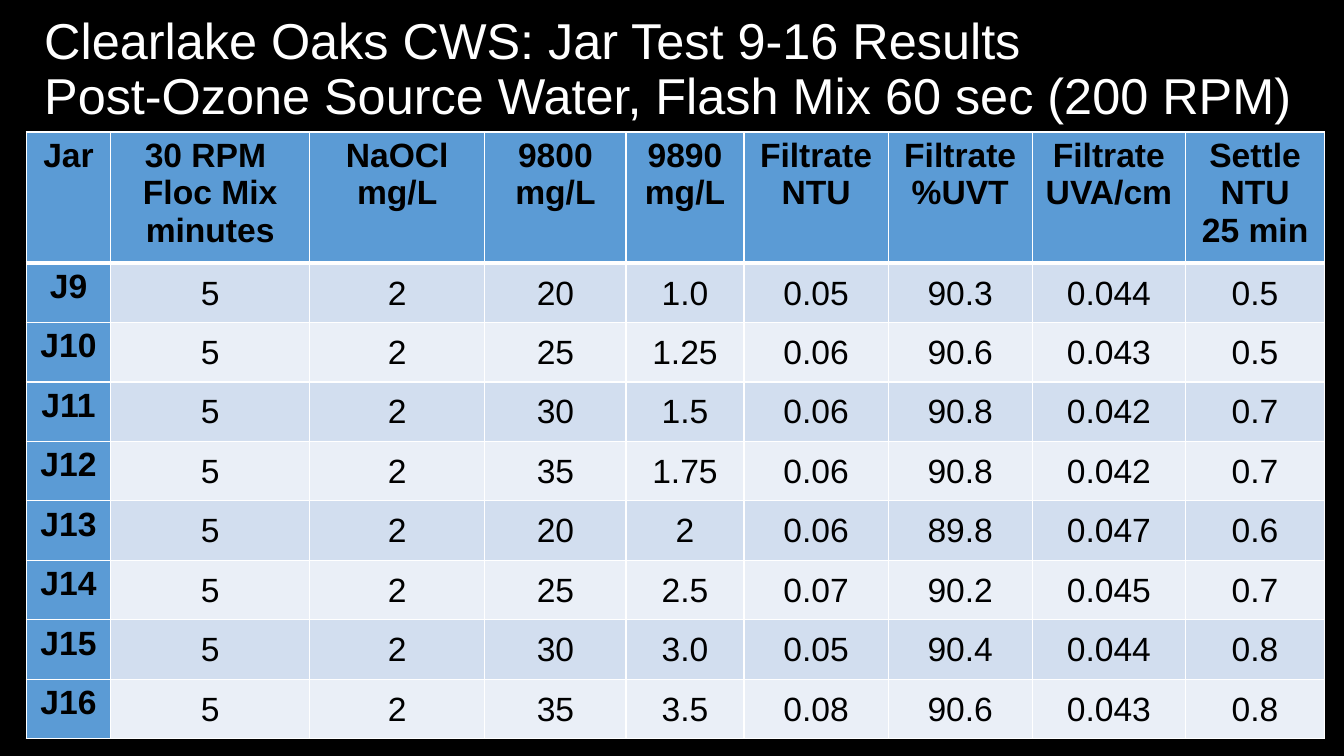
from pptx import Presentation
from pptx.dml.color import RGBColor
from pptx.enum.text import MSO_ANCHOR, PP_ALIGN
from pptx.oxml.ns import qn
from pptx.util import Inches, Pt
from lxml.etree import SubElement

FONT = "Arial"
BLACK, WHITE = "000000", "FFFFFF"
HEADER_BLUE, BAND_DARK, BAND_LIGHT = "5B9BD5", "D2DEEF", "EAEFF7"

TITLE = ("Clearlake Oaks CWS: Jar Test 9-16 Results\v"
         "Post-Ozone Source Water, Flash Mix 60 sec (200 RPM)")
HEADERS = ["Jar", "30 RPM \nFloc Mix\nminutes", "NaOCl\nmg/L", "9800\nmg/L",
           "9890\nmg/L", "Filtrate\nNTU", "Filtrate\n%UVT",
           "Filtrate\nUVA/cm", "Settle\nNTU\n25 min"]
RESULTS = [
    ["J9", "5", "2", "20", "1.0", "0.05", "90.3", "0.044", "0.5"],
    ["J10", "5", "2", "25", "1.25", "0.06", "90.6", "0.043", "0.5"],
    ["J11", "5", "2", "30", "1.5", "0.06", "90.8", "0.042", "0.7"],
    ["J12", "5", "2", "35", "1.75", "0.06", "90.8", "0.042", "0.7"],
    ["J13", "5", "2", "20", "2", "0.06", "89.8", "0.047", "0.6"],
    ["J14", "5", "2", "25", "2.5", "0.07", "90.2", "0.045", "0.7"],
    ["J15", "5", "2", "30", "3.0", "0.05", "90.4", "0.044", "0.8"],
    ["J16", "5", "2", "35", "3.5", "0.08", "90.6", "0.043", "0.8"],
]
COL_WIDTHS = [0.84, 1.97, 1.74, 1.4, 1.17, 1.43, 1.43, 1.52, 1.38]
HEADER_HEIGHT = 1.26


def rgb(color):
    return RGBColor.from_string(color)


def format_text(tf, size, color, bold=False):
    for p in tf.paragraphs:
        for r in p.runs:
            r.font.name = FONT
            r.font.size = Pt(size)
            r.font.bold = bold
            r.font.color.rgb = rgb(color)


def add_title(s, left, top, width, height):
    tf = s.shapes.add_textbox(Inches(left), Inches(top),
                              Inches(width), Inches(height)).text_frame
    tf.word_wrap = True
    tf.vertical_anchor = MSO_ANCHOR.MIDDLE
    tf.text = TITLE
    tf.paragraphs[0].line_spacing = 0.9
    format_text(tf, 36, WHITE)


def set_borders(cell, top, bottom):
    """Draw white cell edges; top and bottom are widths in points."""
    tcPr = cell._tc.get_or_add_tcPr()
    for edge, width in (("L", 1), ("R", 1), ("T", top), ("B", bottom)):
        ln = SubElement(tcPr, qn(f"a:ln{edge}"), w=str(Pt(width)))
        fill = SubElement(ln, qn("a:solidFill"))
        SubElement(fill, qn("a:srgbClr"), val=WHITE)


def fill_cell(cell, text, row, col):
    is_label = row == 0 or col == 0
    set_borders(cell, top=3 if row == 1 else 1, bottom=3 if row == 0 else 1)
    cell.fill.solid()
    band = BAND_DARK if row % 2 else BAND_LIGHT
    cell.fill.fore_color.rgb = rgb(HEADER_BLUE if is_label else band)
    if not is_label:
        cell.vertical_anchor = MSO_ANCHOR.MIDDLE
        cell.margin_left = cell.margin_right = cell.margin_top = Inches(0.01)
        cell.margin_bottom = 0
    cell.text_frame.text = text
    for p in cell.text_frame.paragraphs:
        p.alignment = PP_ALIGN.CENTER
    format_text(cell.text_frame, 24, BLACK, bold=is_label)


def add_results_table(s, left, top, width, height):
    rows = [HEADERS] + RESULTS
    table = s.shapes.add_table(len(rows), len(HEADERS), Inches(left), Inches(top),
                               Inches(width), Inches(height)).table
    for column, share in zip(table.columns, COL_WIDTHS):
        column.width = Inches(width * share / sum(COL_WIDTHS))
    for i, values in enumerate(rows):
        result_height = (height - HEADER_HEIGHT) / len(RESULTS)
        table.rows[i].height = Inches(result_height if i else HEADER_HEIGHT)
        for j, text in enumerate(values):
            fill_cell(table.cell(i, j), text, i, j)


def main():
    prs = Presentation()
    prs.slide_width, prs.slide_height = Inches(13.33), Inches(7.5)
    s = prs.slides.add_slide(prs.slide_layouts[6])
    s.background.fill.solid()
    s.background.fill.fore_color.rgb = rgb(BLACK)
    add_title(s, 0.34, 0.09, 12.7, 1.22)
    add_results_table(s, 0.26, 1.31, 12.88, 5.98)
    prs.save("out.pptx")


if __name__ == "__main__":
    main()
